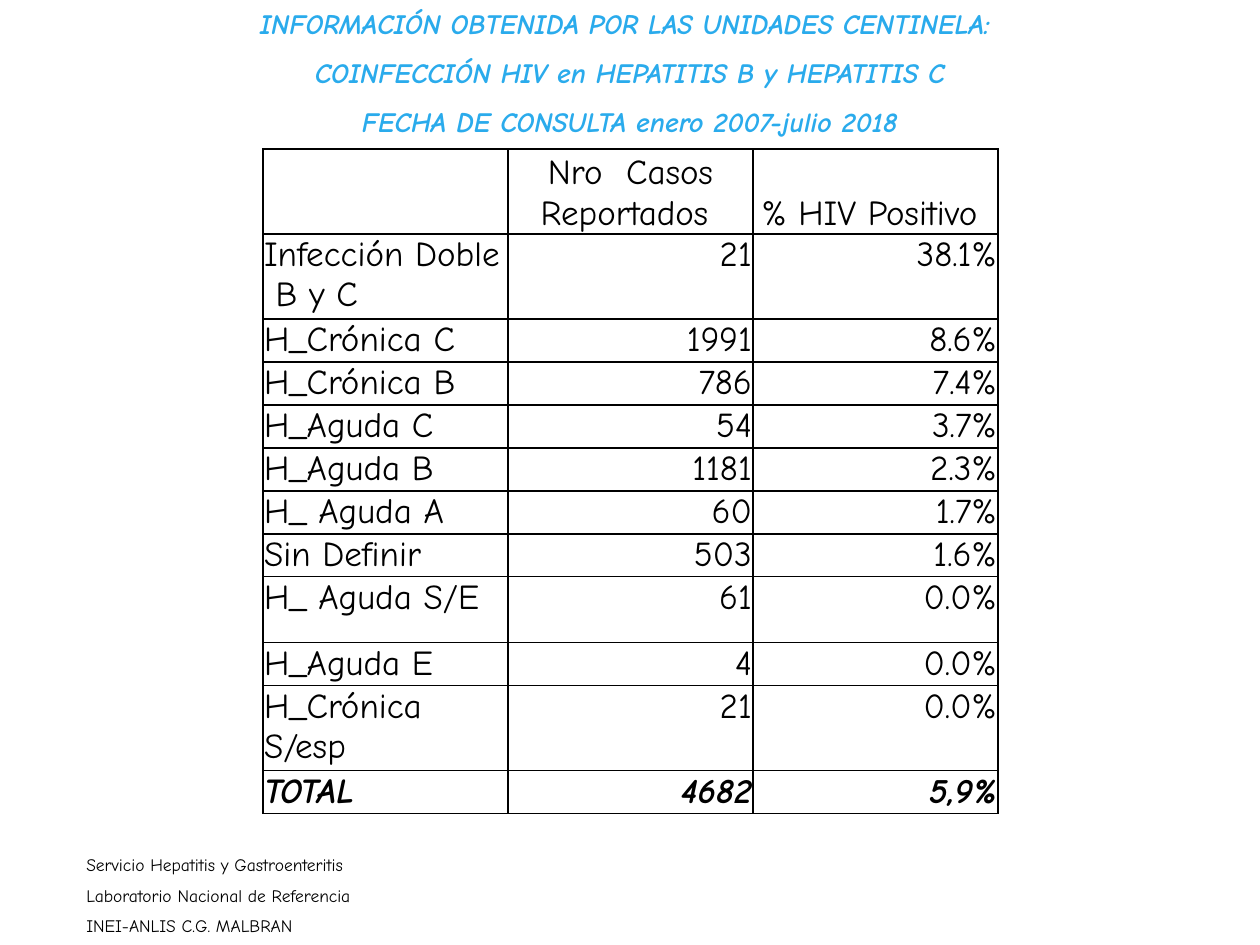
import pptx
import pptx.util
import pptx.dml.color
import pptx.enum.text
import pptx.oxml

ALIGN = pptx.enum.text.PP_ALIGN
ANCHOR = pptx.enum.text.MSO_ANCHOR
BLACK = pptx.dml.color.RGBColor(0x00, 0x00, 0x00)
BLUE = pptx.dml.color.RGBColor(0x2A, 0xAB, 0xEC)
SCALE = 914400 // 126
NS = "http://schemas.openxmlformats.org/drawingml/2006/main"

TITLE = (
    "INFORMACIÓN OBTENIDA POR LAS UNIDADES CENTINELA: ",
    "COINFECCIÓN HIV en HEPATITIS B y HEPATITIS C",
    "FECHA DE CONSULTA enero 2007-julio 2018",
)
SOURCE = (
    "Servicio Hepatitis y Gastroenteritis",
    "Laboratorio Nacional de Referencia",
    "INEI-ANLIS C.G. MALBRAN",
)
CASES = (
    ("", "Nro  Casos Reportados ", "% HIV Positivo "),
    ("Infección Doble  B y C", "21", "38.1%"),
    ("H_Crónica C", "1991", "8.6%"),
    ("H_Crónica B", "786", "7.4%"),
    ("H_Aguda C", "54", "3.7%"),
    ("H_Aguda B", "1181", "2.3%"),
    ("H_ Aguda A", "60", "1.7%"),
    ("Sin Definir", "503", "1.6%"),
    ("H_ Aguda S/E", "61", "0.0%"),
    ("H_Aguda E", "4", "0.0%"),
    ("H_Crónica S/esp", "21", "0.0%"),
    ("TOTAL", "4682", "5,9%"),
)
TALL = {0: 85, 1: 85, 8: 66, 10: 85}


def px(size):
    return pptx.util.Emu(size * SCALE)


class Page:
    font = "Comic Neue"

    def __init__(self, deck):
        self.slide = deck.slides.add_slide(deck.slide_layouts[5])

    def style(self, frame, size, color, align, strong=False, gap=0):
        for i, para in enumerate(frame.paragraphs):
            para.alignment = align
            para.space_before = pptx.util.Pt(gap if i else 0)
            for run in para.runs:
                run.font.name = self.font
                run.font.size = pptx.util.Pt(size)
                run.font.color.rgb = color
                run.font.bold = run.font.italic = strong

    def fill(self, shape, box, lines):
        shape.left, shape.top, shape.width, shape.height = map(px, box)
        frame = shape.text_frame
        frame.word_wrap = True
        frame.auto_size = pptx.enum.text.MSO_AUTO_SIZE.NONE
        frame.vertical_anchor = ANCHOR.TOP
        frame.text = "\n".join(lines)
        return frame

    def title(self, box, lines):
        frame = self.fill(self.slide.shapes.title, box, lines)
        self.style(frame, 16, BLUE, ALIGN.CENTER, True, 8.8)

    def note(self, box, lines):
        shape = self.slide.shapes.add_textbox(*map(px, box))
        frame = self.fill(shape, box, lines)
        self.style(frame, 10, BLACK, ALIGN.LEFT, gap=5.5)

    def border(self, cell):
        props = cell._tc.get_or_add_tcPr()
        for side in "LRTB":
            props.append(pptx.oxml.parse_xml(
                f'<a:ln{side} xmlns:a="{NS}" w="12700"><a:solidFill>'
                f'<a:srgbClr val="{BLACK}"/></a:solidFill></a:ln{side}>'))

    def cell(self, cell, text, align, anchor, strong):
        cell.margin_left = cell.margin_right = cell.margin_top = px(1)
        cell.margin_bottom = 0
        cell.vertical_anchor = anchor
        self.border(cell)
        cell.fill.background()
        cell.text = text
        self.style(cell.text_frame, 20, BLACK, align, strong)

    def table(self, left, top, width, rows, tall, base):
        sizes = [tall.get(i, base) for i in range(len(rows))]
        box = map(px, (left, top, width * len(rows[0]), sum(sizes)))
        table = self.slide.shapes.add_table(len(rows), len(rows[0]), *box).table
        table.first_row = table.horz_banding = False
        for col in table.columns:
            col.width = px(width)
        for i, row in enumerate(rows):
            table.rows[i].height = px(sizes[i])
            for j, text in enumerate(row):
                align = ALIGN.RIGHT if j else ALIGN.LEFT
                if i == 0:
                    align = ALIGN.CENTER
                anchor = ANCHOR.TOP if i else ANCHOR.BOTTOM
                last = i == len(rows) - 1
                self.cell(table.cell(i, j), text, align, anchor, last)


def main():
    deck = pptx.Presentation()
    deck.slide_width, deck.slide_height = px(1260), px(945)
    page = Page(deck)
    page.title((0, 0, 1260, 149), TITLE)
    page.note((74, 848, 441, 97), SOURCE)
    page.table(263, 149, 245, CASES, TALL, 43)
    deck.save("out.pptx")


if __name__ == "__main__":
    main()
